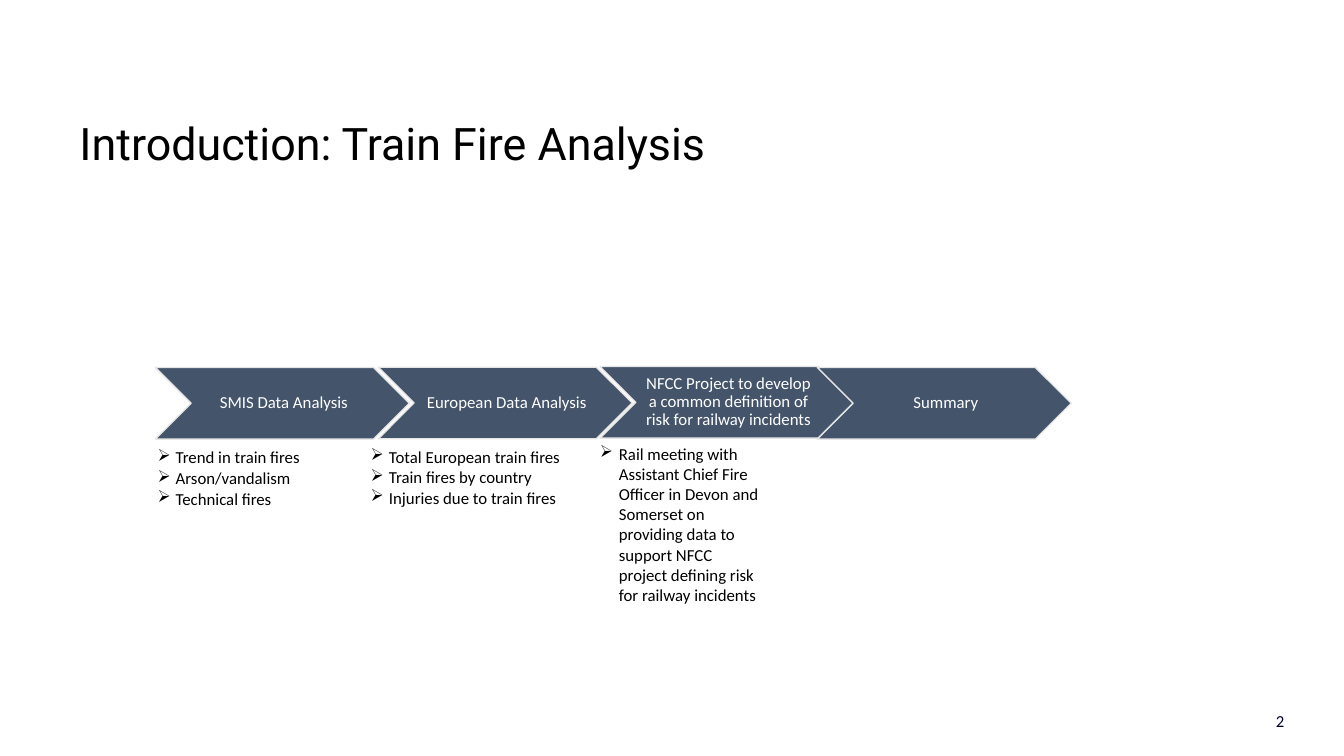
from lxml import etree
from pptx import Presentation
from pptx.dml.color import RGBColor
from pptx.enum.shapes import MSO_SHAPE
from pptx.enum.text import MSO_ANCHOR, PP_ALIGN
from pptx.oxml.ns import qn
from pptx.util import Pt

CHEVRON = MSO_SHAPE.CHEVRON
TOP, MIDDLE = MSO_ANCHOR.TOP, MSO_ANCHOR.MIDDLE
LEFT, CENTER, RIGHT = PP_ALIGN.LEFT, PP_ALIGN.CENTER, PP_ALIGN.RIGHT

BLACK = RGBColor(0x00, 0x00, 0x00)
WHITE = RGBColor(0xFF, 0xFF, 0xFF)
NAVY = RGBColor(0x00, 0x00, 0x32)
SLATE = RGBColor(0x44, 0x54, 0x6A)
PALE = RGBColor(0xE7, 0xE6, 0xE6)

TITLE = "Introduction: Train Fire Analysis"
PAGE_NUMBER = "2"
STEPS = [
    ("SMIS Data Analysis", 111, 262.5),
    ("NFCC Project to develop a common definition of risk for railway incidents", 428.6, 261.8),
    ("European Data Analysis", 270.2, 262.3),
    ("Summary", 583.8, 262.5),
]
TOPIC_LISTS = [
    (["Trend in train fires", "Arson/vandalism", "Technical fires"], 112.5, 320.9),
    (["Total European train fires", "Train fires by country", "Injuries due to train fires"],
     264.8, 320.4),
]
MEETING = ["Rail meeting with Assistant Chief Fire Officer in Devon and Somerset on "
           "providing data to support NFCC project defining risk for railway incidents"]

STEP_SIZE = (181.4, 51.1)
TOPIC_SIZE = (145.4, 44.6)
DEFAULT_INSETS = (7.2, 3.6, 7.2, 3.6)
STEP_INSETS = (3.6, 1.4, 1.4, 1.4)
NO_INSETS = (0, 0, 0, 0)


def add_bullet(paragraph, indent):
    properties = paragraph._p.get_or_add_pPr()
    properties.set("marL", str(Pt(indent)))
    properties.set("indent", str(-Pt(indent)))
    etree.SubElement(properties, qn("a:buChar")).set("char", "➢")


def write(shape, lines, size=12, font="Calibri", color=BLACK, align=LEFT, anchor=TOP,
          insets=DEFAULT_INSETS, spacing=1.0, after=0, indent=None):
    frame = shape.text_frame
    frame.word_wrap = True
    frame.vertical_anchor = anchor
    (frame.margin_left, frame.margin_top,
     frame.margin_right, frame.margin_bottom) = map(Pt, insets)
    for index, line in enumerate(lines):
        paragraph = frame.add_paragraph() if index else frame.paragraphs[0]
        paragraph.text = line
        if indent:
            add_bullet(paragraph, indent)
        paragraph.alignment = align
        paragraph.line_spacing = spacing
        paragraph.space_after = Pt(after)
        paragraph.font.size = Pt(size)
        paragraph.font.name = font
        paragraph.font.color.rgb = color


def add_text(slide, box, lines, **style):
    write(slide.shapes.add_textbox(*map(Pt, box)), lines, **style)


def add_step(slide, label, left, top):
    shape = slide.shapes.add_shape(CHEVRON, *map(Pt, (left, top, *STEP_SIZE)))
    shape.shadow.inherit = False
    shape.fill.solid()
    shape.fill.fore_color.rgb = SLATE
    shape.line.color.rgb = PALE
    shape.line.width = Pt(1)
    write(shape, [label], color=WHITE, align=CENTER, anchor=MIDDLE,
          insets=STEP_INSETS, spacing=0.9)


def main():
    presentation = Presentation()
    presentation.slide_width, presentation.slide_height = Pt(960), Pt(540)
    slide = presentation.slides.add_slide(presentation.slide_layouts[6])

    add_text(slide, (708.5, 500.4, 216, 28.8), [PAGE_NUMBER],
             color=NAVY, align=RIGHT, anchor=MIDDLE)
    add_text(slide, (49.7, 79.2, 649.4, 49.7), [TITLE],
             size=32, font="Roboto", anchor=MIDDLE, spacing=0.9)
    for label, left, top in STEPS:
        add_step(slide, label, left, top)
    for topics, left, top in TOPIC_LISTS:
        add_text(slide, (left, top, *TOPIC_SIZE), topics,
                 insets=NO_INSETS, spacing=0.9, after=1.8, indent=13)
    add_text(slide, (421.5, 313.2, 129.6, 123.8), MEETING, indent=13.5)

    presentation.save("out.pptx")


if __name__ == "__main__":
    main()
